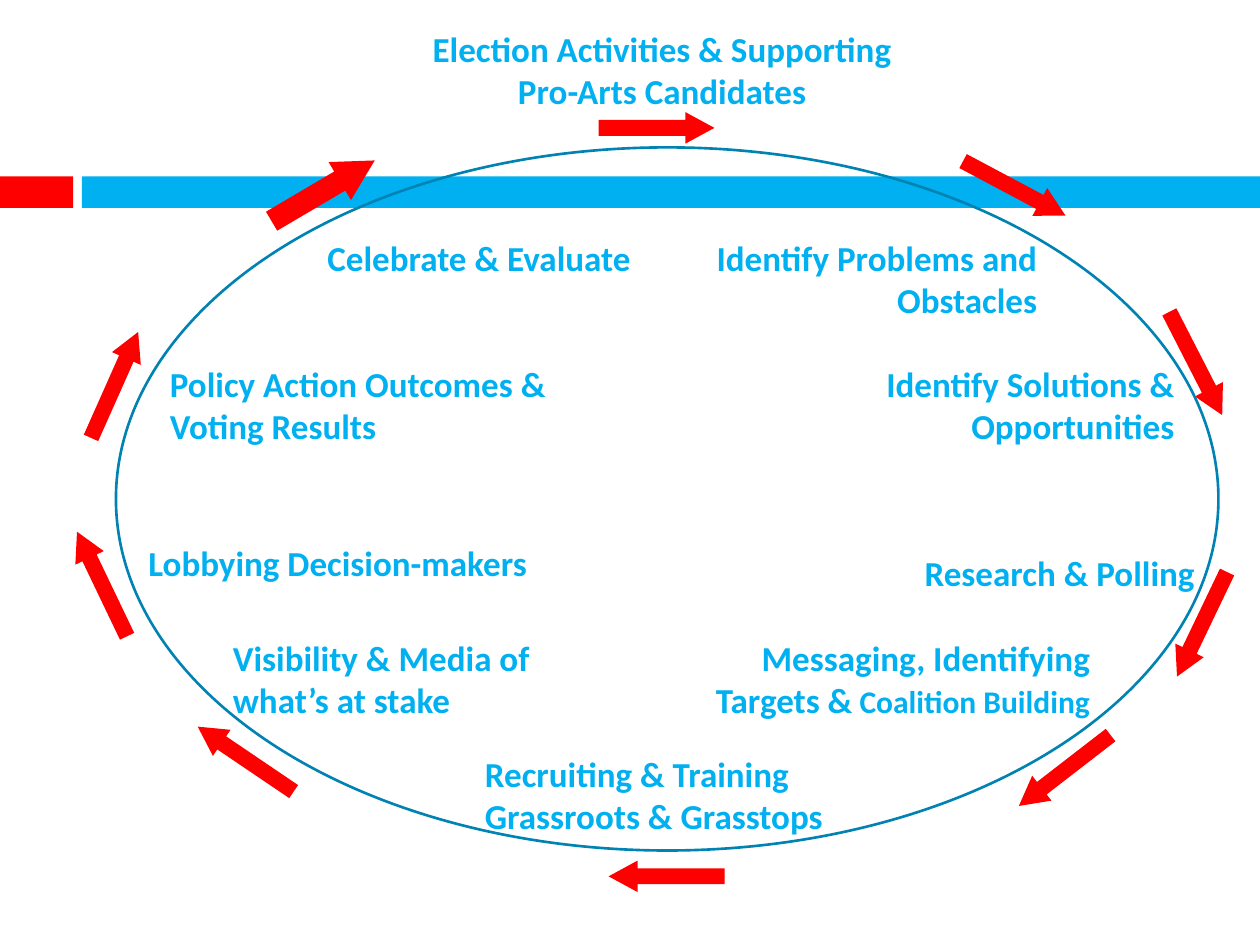
"""Build a slide showing the yearly arts advocacy cycle around an ellipse."""
from pptx import Presentation
from pptx.dml.color import RGBColor
from pptx.enum.shapes import MSO_SHAPE as Shape
from pptx.enum.text import PP_ALIGN as Align
from pptx.util import Inches, Pt

COLORS = {"red": "FF0000", "blue": "00B0F0", "ring": "0082B2"}

deck = Presentation()
deck.slide_width, deck.slide_height = Inches(10), Inches(7.5)
slide = deck.slides.add_slide(deck.slide_layouts[6])


def add_solid(kind, box, color):
    shape = slide.shapes.add_shape(kind, *map(Inches, box))
    shape.shadow.inherit = False
    shape.fill.solid()
    shape.fill.fore_color.rgb = RGBColor.from_string(COLORS[color])
    shape.line.fill.background()
    return shape


add_solid(Shape.RECTANGLE, (0, 1.4, 0.58, 0.25), "red")
add_solid(Shape.RECTANGLE, (0.65, 1.4, 9.35, 0.25), "blue")

labels = [
    (3.17, 0.17, 4.17, Align.CENTER, [("Election Activities & Supporting Pro-Arts Candidates", 20)]),
    (1.25, 2.83, 3.25, Align.LEFT, [("Policy Action Outcomes & Voting Results", 20)]),
    (5.25, 1.83, 3.08, Align.RIGHT, [("Identify Problems and Obstacles", 20)]),
    (6.5, 2.83, 2.92, Align.RIGHT, [("Identify Solutions & Opportunities", 20)]),
    (1.08, 4.25, 3.5, Align.LEFT, [("Lobbying Decision-makers", 20)]),
    (6.83, 4.33, 2.75, Align.RIGHT, [("Research & Polling", 20)]),
    (1.75, 5, 2.58, Align.LEFT, [("Visibility & Media of what’s at stake", 20)]),
    (5.5, 5, 3.25, Align.RIGHT,
     [("Messaging, Identifying Targets &", 20), (" Coalition Building", 18)]),
    (3.75, 5.92, 2.92, Align.LEFT, [("Recruiting & Training Grassroots & Grasstops", 20)]),
    (2.5, 1.83, 2.67, Align.LEFT, [("Celebrate & Evaluate", 20)]),
]
single = ("Lobbying Decision-makers", "Research & Polling", "Celebrate & Evaluate")
for left, top, width, align, runs in labels:
    height = 0.44 if runs[0][0] in single else 0.77
    box = slide.shapes.add_textbox(*map(Inches, (left, top, width, height)))
    box.text_frame.word_wrap = True
    para = box.text_frame.paragraphs[0]
    para.alignment = align
    for text, size in runs:
        run = para.add_run()
        run.text = text
        run.font.name = "Calibri"
        run.font.size = Pt(size)
        run.font.bold = True
        run.font.color.rgb = RGBColor.from_string(COLORS["blue"])

arrows = [
    (4.75, 0.89, 0.92, 0.25, 0),
    (4.83, 6.83, 0.92, 0.25, 180),
    (7.59, 1.37, 0.92, 0.25, 28),
    (2.09, 1.34, 0.95, 0.35, 329.5),
    (9.03, 2.76, 0.92, 0.25, 62.9),
    (9.08, 4.83, 0.92, 0.25, 115.6),
    (7.99, 5.99, 0.92, 0.25, 142.3),
    (1.49, 5.9, 0.92, 0.25, 214.1),
    (0.35, 4.51, 0.92, 0.25, 244.4),
    (0.45, 2.93, 0.92, 0.25, 294),
]
for *box, angle in arrows:
    arrow = add_solid(Shape.RIGHT_ARROW, box, "red")
    arrow.adjustments[0] = 0.5
    arrow.adjustments[1] = 0.92
    arrow.rotation = angle

ring = slide.shapes.add_shape(Shape.OVAL, *map(Inches, (0.92, 1.17, 8.75, 5.58)))
ring.shadow.inherit = False
ring.fill.background()
ring.line.color.rgb = RGBColor.from_string(COLORS["ring"])
ring.line.width = Pt(1.5)

deck.save("out.pptx")
